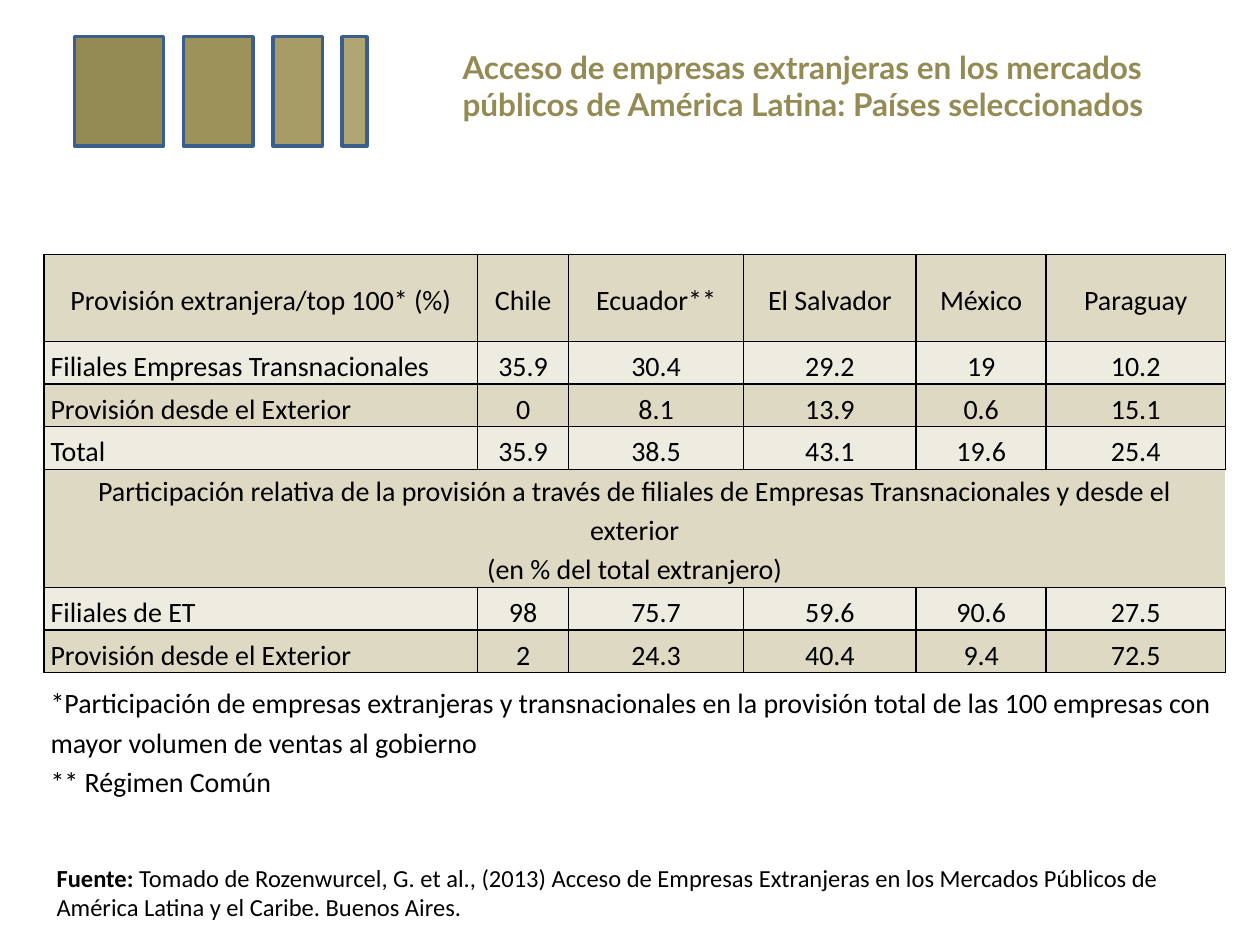
from dataclasses import dataclass

from lxml import etree
from pptx import Presentation
from pptx.dml.color import RGBColor
from pptx.enum.shapes import MSO_SHAPE
from pptx.enum.text import MSO_ANCHOR, MSO_AUTO_SIZE, PP_ALIGN
from pptx.oxml.ns import qn
from pptx.util import Cm, Pt

RECT = MSO_SHAPE.RECTANGLE
MIDDLE, BOTTOM, TOP = MSO_ANCHOR.MIDDLE, MSO_ANCHOR.BOTTOM, MSO_ANCHOR.TOP
LEFT, CENTER = PP_ALIGN.LEFT, PP_ALIGN.CENTER
NO_FIT, GROW = MSO_AUTO_SIZE.NONE, MSO_AUTO_SIZE.SHAPE_TO_FIT_TEXT
TITLE_ONLY = 5


@dataclass(frozen=True)
class Theme:
    title_font: str = "Lato"
    body_font: str = "Calibri"
    title_size: int = 18
    table_size: int = 16
    source_size: int = 14
    olive: str = "948A54"
    ink: str = "000000"
    outline: str = "3A5F8C"
    bands: tuple = ("DDD9C3", "EEECE1")
    bars: tuple = ("948A54", "9D9259", "A79C65", "B0A674")


HEADER = ["Provisión extranjera/top 100* (%)", "Chile", "Ecuador**",
          "El Salvador", "México", "Paraguay"]
SHARE_HEADING = ["Participación relativa de la provisión a través de filiales de "
                 "Empresas Transnacionales y desde el exterior",
                 "(en % del total extranjero)"]
FOOTNOTES = ["*Participación de empresas extranjeras y transnacionales en la provisión "
             "total de las 100 empresas con mayor volumen de ventas al gobierno",
             "** Régimen Común"]
ROWS = [
    HEADER,
    ["Filiales Empresas Transnacionales", "35.9", "30.4", "29.2", "19", "10.2"],
    ["Provisión desde el Exterior", "0", "8.1", "13.9", "0.6", "15.1"],
    ["Total", "35.9", "38.5", "43.1", "19.6", "25.4"],
    [SHARE_HEADING],
    ["Filiales de ET", "98", "75.7", "59.6", "90.6", "27.5"],
    ["Provisión desde el Exterior", "2", "24.3", "40.4", "9.4", "72.5"],
    [FOOTNOTES],
]
COL_WIDTHS = [8.74, 1.83, 3.53, 3.48, 2.62, 3.61]
ROW_HEIGHTS = [1.75, 0.86, 0.86, 0.86, 2.21, 0.86, 0.86, 2.57]


def write(tf, paragraphs, *, font, size, color, align=LEFT, spacing=None, bold=False):
    for i, runs in enumerate(paragraphs):
        p = tf.paragraphs[0] if i == 0 else tf.add_paragraph()
        p.alignment = align
        if spacing:
            p.line_spacing = spacing
        for text, strong in [(runs, bold)] if isinstance(runs, str) else runs:
            r = p.add_run()
            r.text = text
            r.font.name = font
            r.font.size = Pt(size)
            r.font.bold = strong
            r.font.color.rgb = RGBColor.from_string(color)


def set_borders(cell, sides, color):
    tc_pr = cell._tc.get_or_add_tcPr()
    for side in "LRTB":
        ln = etree.SubElement(tc_pr, qn(f"a:ln{side}"), w=str(Pt(1)))
        if side in sides:
            fill = etree.SubElement(ln, qn("a:solidFill"))
            etree.SubElement(fill, qn("a:srgbClr"), val=color)
        else:
            etree.SubElement(ln, qn("a:noFill"))


class Deck:
    def __init__(self, theme):
        self.theme = theme
        self.prs = Presentation()
        self.prs.slide_width, self.prs.slide_height = Cm(25.4), Cm(19.05)
        self.s = self.prs.slides.add_slide(self.prs.slide_layouts[TITLE_ONLY])

    def title(self, text, x, y, w, h):
        sp = self.s.shapes.title
        sp.left, sp.top, sp.width, sp.height = Cm(x), Cm(y), Cm(w), Cm(h)
        tf = sp.text_frame
        tf.word_wrap, tf.auto_size, tf.vertical_anchor = True, NO_FIT, MIDDLE
        write(tf, [text], font=self.theme.title_font, size=self.theme.title_size,
              color=self.theme.olive, bold=True)

    def bars(self, x, y, widths, h, gap):
        group = self.s.shapes.add_group_shape()
        for w, color in zip(widths, self.theme.bars):
            sp = group.shapes.add_shape(RECT, Cm(x), Cm(y), Cm(w), Cm(h))
            sp.shadow.inherit = False
            sp.fill.solid()
            sp.fill.fore_color.rgb = RGBColor.from_string(color)
            sp.line.color.rgb = RGBColor.from_string(self.theme.outline)
            sp.line.width = Pt(2)
            x += w + gap

    def table(self, rows, x, y, widths, heights):
        frame = self.s.shapes.add_table(len(rows), len(widths), Cm(x), Cm(y),
                                        Cm(sum(widths)), Cm(sum(heights)))
        table = frame.table
        table.first_row = table.horz_banding = False
        for column, w in zip(table.columns, widths):
            column.width = Cm(w)
        for i, (values, h) in enumerate(zip(rows, heights)):
            table.rows[i].height = Cm(h)
            is_note = values == [FOOTNOTES]
            is_heading = values in (HEADER, [SHARE_HEADING])
            spans = len(values) == 1
            for j in range(len(widths)):
                cell = table.cell(i, j)
                sides = "T" if is_note else "LRTB"
                if spans and not is_note:
                    sides = "LTB" if j == 0 else "TB"
                set_borders(cell, sides, self.theme.ink)
                if is_note:
                    cell.fill.background()
                else:
                    cell.fill.solid()
                    cell.fill.fore_color.rgb = RGBColor.from_string(self.theme.bands[i % 2])
            if spans:
                table.cell(i, 0).merge(table.cell(i, len(widths) - 1))
            for j, value in enumerate(values):
                cell = table.cell(i, j)
                cell.margin_left = cell.margin_right = Cm(0.13)
                cell.margin_top = cell.margin_bottom = 0
                cell.vertical_anchor = MIDDLE if is_heading else BOTTOM
                write(cell.text_frame, value if spans else [value],
                      font=self.theme.body_font, size=self.theme.table_size,
                      color=self.theme.ink, spacing=1.15,
                      align=CENTER if is_heading or j else LEFT)

    def source(self, runs, x, y, w, h):
        tf = self.s.shapes.add_textbox(Cm(x), Cm(y), Cm(w), Cm(h)).text_frame
        tf.word_wrap, tf.auto_size, tf.vertical_anchor = True, GROW, TOP
        write(tf, [runs], font=self.theme.body_font, size=self.theme.source_size,
              color=self.theme.ink)


def main():
    deck = Deck(Theme())
    deck.title("Acceso de empresas extranjeras en los mercados públicos de América "
               "Latina: Países seleccionados", 9.07, 0.13, 16.43, 3.18)
    deck.bars(1.5, 0.74, [1.8, 1.4, 1, 0.5], 2.2, 0.4)
    deck.table(ROWS, 0.89, 5.13, COL_WIDTHS, ROW_HEIGHTS)
    deck.source([("Fuente:", True),
                 (" Tomado de Rozenwurcel, G. et al., (2013) Acceso de Empresas Extranjeras "
                  "en los Mercados Públicos de América Latina y el Caribe. Buenos Aires.",
                  False)], 0.89, 17.27, 24, 1.45)
    deck.prs.save("out.pptx")


if __name__ == "__main__":
    main()
